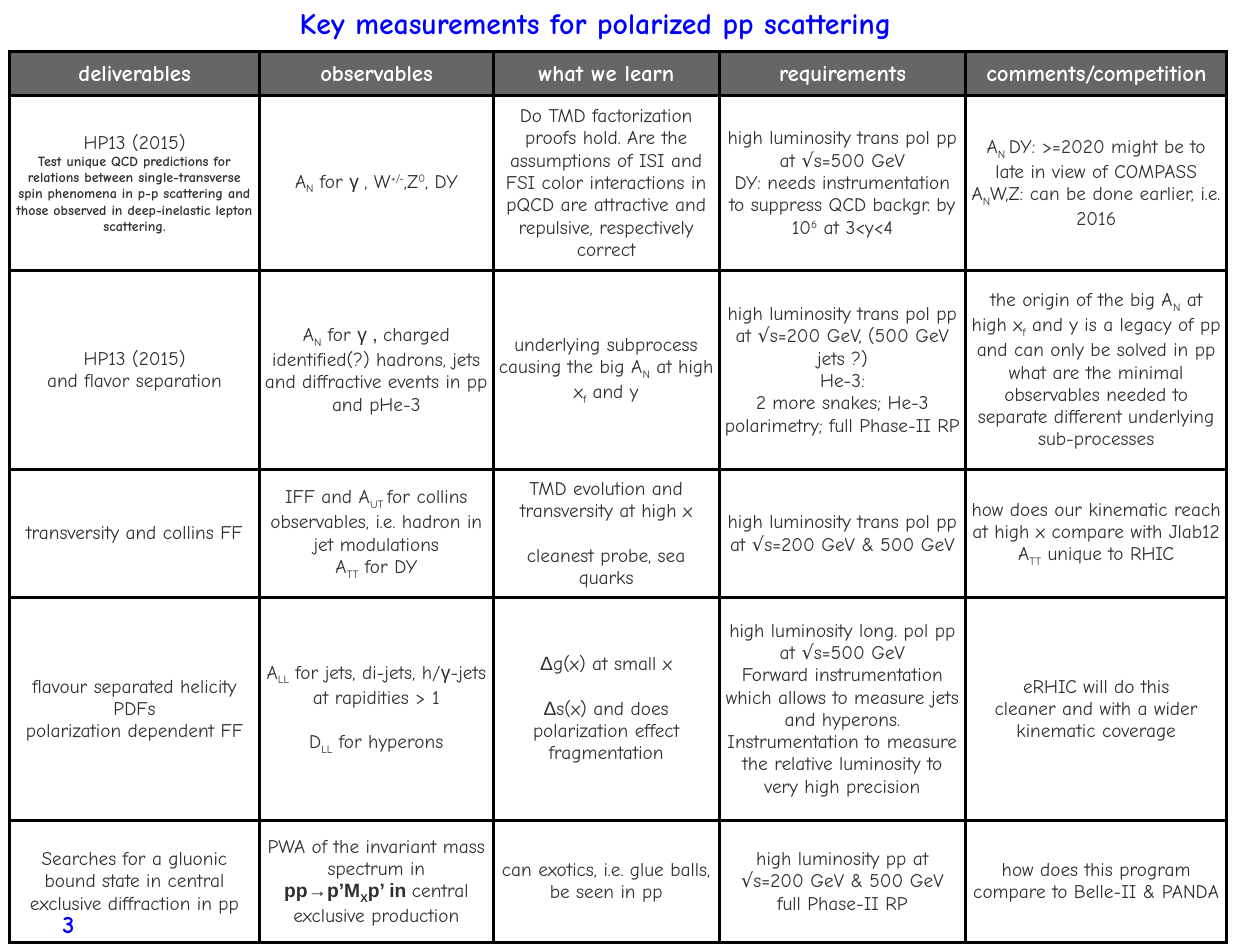
from lxml import etree
from pptx import Presentation
from pptx.dml.color import RGBColor
from pptx.enum.text import MSO_ANCHOR as Anchor, MSO_AUTO_SIZE as AutoSize, PP_ALIGN as Align
from pptx.oxml.ns import qn
from pptx.util import Pt

BLACK = RGBColor(0x00, 0x00, 0x00)
BLUE = RGBColor(0x00, 0x00, 0xFF)
DARK = RGBColor(0x32, 0x2F, 0x31)
GREY = RGBColor(0x66, 0x66, 0x66)
WHITE = RGBColor(0xFF, 0xFF, 0xFF)
FONT, SYMBOL_FONT = "Comic Neue", "Arial"

COLUMN_WIDTHS = [142.6, 133.8, 128.9, 141.1, 149]
ROW_HEIGHTS = [25.2, 99.8, 113.8, 73.2, 127.2, 70]

# Runs are split by "|". Leading marks: _ subscript, ^ superscript,
# @ symbol font, * bold, ~ small. A paragraph starting with + has a gap above.
ROWS = [
    ["deliverables", "observables", "what we learn", "requirements", "comments/competition"],
    ["HP13 (2015)\n~*Test unique QCD predictions for relations between single-transverse spin "
     "phenomena in p-p scattering and those observed in deep-inelastic lepton scattering.",
     "A|_N| for |@γ |, W|^+/-|,Z|^0|, DY",
     "Do TMD factorization proofs hold. Are the assumptions of ISI and FSI color interactions "
     "in pQCD are attractive and repulsive, respectively correct",
     "high luminosity trans pol pp at √s=500 GeV\n"
     "DY: needs instrumentation to suppress QCD backgr. by 10|^6| at 3<y<4",
     "A|_N |DY: >=2020 might be to late in view of COMPASS\n"
     "A|_N|W,Z: can be done earlier, i.e. 2016"],
    ["HP13 (2015)\nand flavor separation",
     "A|_N| for |@γ , |charged identified(?) hadrons, jets and diffractive events in pp and pHe-3",
     "underlying subprocess causing the big A|_N| at high x|_f| and y",
     "high luminosity trans pol pp at √s=200 GeV, (500 GeV jets ?)\nHe-3:\n"
     "2 more snakes; He-3 polarimetry; full Phase-II RP",
     "the origin of the big A|_N| at high x|_f| and y is a legacy of pp and can only be solved "
     "in pp\nwhat are the minimal observables needed to separate different underlying sub-processes"],
    ["transversity and collins FF",
     "IFF and A|_UT |for collins observables, i.e. hadron in jet modulations\nA|_TT| for DY",
     "TMD evolution and transversity at high x\n+cleanest probe, sea quarks",
     "high luminosity trans pol pp at √s=200 GeV & 500 GeV",
     "how does our kinematic reach at high x compare with Jlab12\nA|_TT| unique to RHIC"],
    ["flavour separated helicity PDFs\npolarization dependent FF",
     "A|_LL| for jets, di-jets, h/|@γ|-jets at rapidities > 1\n+D|_LL| for hyperons",
     "@Δ|g(x) at small x\n+@Δ|s(x) and does polarization effect fragmentation",
     "high luminosity long. pol pp at √s=500 GeV\n"
     "Forward instrumentation which allows to measure jets and hyperons.\n"
     "Instrumentation to measure the relative luminosity to very high precision",
     "eRHIC will do this\ncleaner and with a wider kinematic coverage"],
    ["Searches for a gluonic bound state in central exclusive diffraction in pp",
     "PWA of the invariant mass spectrum in\n"
     "*@pp→p’M|*@_X|*@p’ in |central exclusive production",
     "can exotics, i.e. glue balls, be seen in pp",
     "high luminosity pp at √s=200 GeV & 500 GeV\nfull Phase-II RP",
     "how does this program compare to Belle-II & PANDA"],
]


def fill_cell_text(text_frame, markup, size, color, bold):
    for index, line in enumerate(markup.split("\n")):
        paragraph = text_frame.paragraphs[0] if index == 0 else text_frame.add_paragraph()
        paragraph.alignment = Align.CENTER
        if line.startswith("+"):
            paragraph.space_before = Pt(12.7)
            line = line[1:]
        for part in line.split("|"):
            text = part.lstrip("_^@*~")
            marks = part[:len(part) - len(text)]
            run = paragraph.add_run()
            run.text = text
            run.font.name = SYMBOL_FONT if "@" in marks else FONT
            run.font.size = Pt(8 if "~" in marks else size)
            run.font.bold = bold or "*" in marks
            run.font.color.rgb = color
            if "_" in marks or "^" in marks:
                run.font._element.set("baseline", "-25000" if "_" in marks else "30000")


def add_label(left, top, width, height, text, size):
    shape = slide.shapes.add_textbox(Pt(left), Pt(top), Pt(width), Pt(height))
    shape.text_frame.text = text
    font = shape.text_frame.paragraphs[0].runs[0].font
    font.name, font.size, font.bold = FONT, Pt(size), True
    font.color.rgb = BLUE
    return shape.text_frame


presentation = Presentation()
presentation.slide_width, presentation.slide_height = Pt(720), Pt(540)
slide = presentation.slides.add_slide(presentation.slide_layouts[6])

# Table of measurements
table = slide.shapes.add_table(
    len(ROWS), len(COLUMN_WIDTHS), Pt(5.6), Pt(29.6),
    Pt(sum(COLUMN_WIDTHS)), Pt(sum(ROW_HEIGHTS))).table
table.horz_banding = False
for column, width in zip(table.columns, COLUMN_WIDTHS):
    column.width = Pt(width)
for row, height in zip(table.rows, ROW_HEIGHTS):
    row.height = Pt(height)

for row_index, row in enumerate(ROWS):
    is_header = row_index == 0
    for column_index, markup in enumerate(row):
        cell = table.cell(row_index, column_index)
        cell.vertical_anchor = Anchor.MIDDLE
        cell.margin_left = cell.margin_right = cell.margin_top = cell.margin_bottom = Pt(2.8)
        # Borders
        properties = cell._tc.get_or_add_tcPr()
        for side in ("lnL", "lnR", "lnT", "lnB"):
            line = etree.SubElement(properties, qn(f"a:{side}"), w=str(Pt(2)))
            solid = etree.SubElement(line, qn("a:solidFill"))
            etree.SubElement(solid, qn("a:srgbClr"), val=str(BLACK))
        # Fill and text
        if is_header:
            cell.fill.solid()
            cell.fill.fore_color.rgb = GREY
            fill_cell_text(cell.text_frame, markup, 13, WHITE, True)
        else:
            cell.fill.background()
            fill_cell_text(cell.text_frame, markup, 11, DARK, False)

# Title
title = add_label(166.3, 0, 391.7, 25.9, "Key measurements for polarized pp scattering", 17)
title.word_wrap = False
title.auto_size = AutoSize.SHAPE_TO_FIT_TEXT
title.margin_left = title.margin_right = Pt(5)
title.margin_top = title.margin_bottom = Pt(2.8)

# Page number
page_number = add_label(1.4, 511.2, 48.2, 28.8, "3", 14)
page_number.word_wrap = True
page_number.vertical_anchor = Anchor.BOTTOM
page_number.paragraphs[0].alignment = Align.RIGHT

presentation.save("out.pptx")
